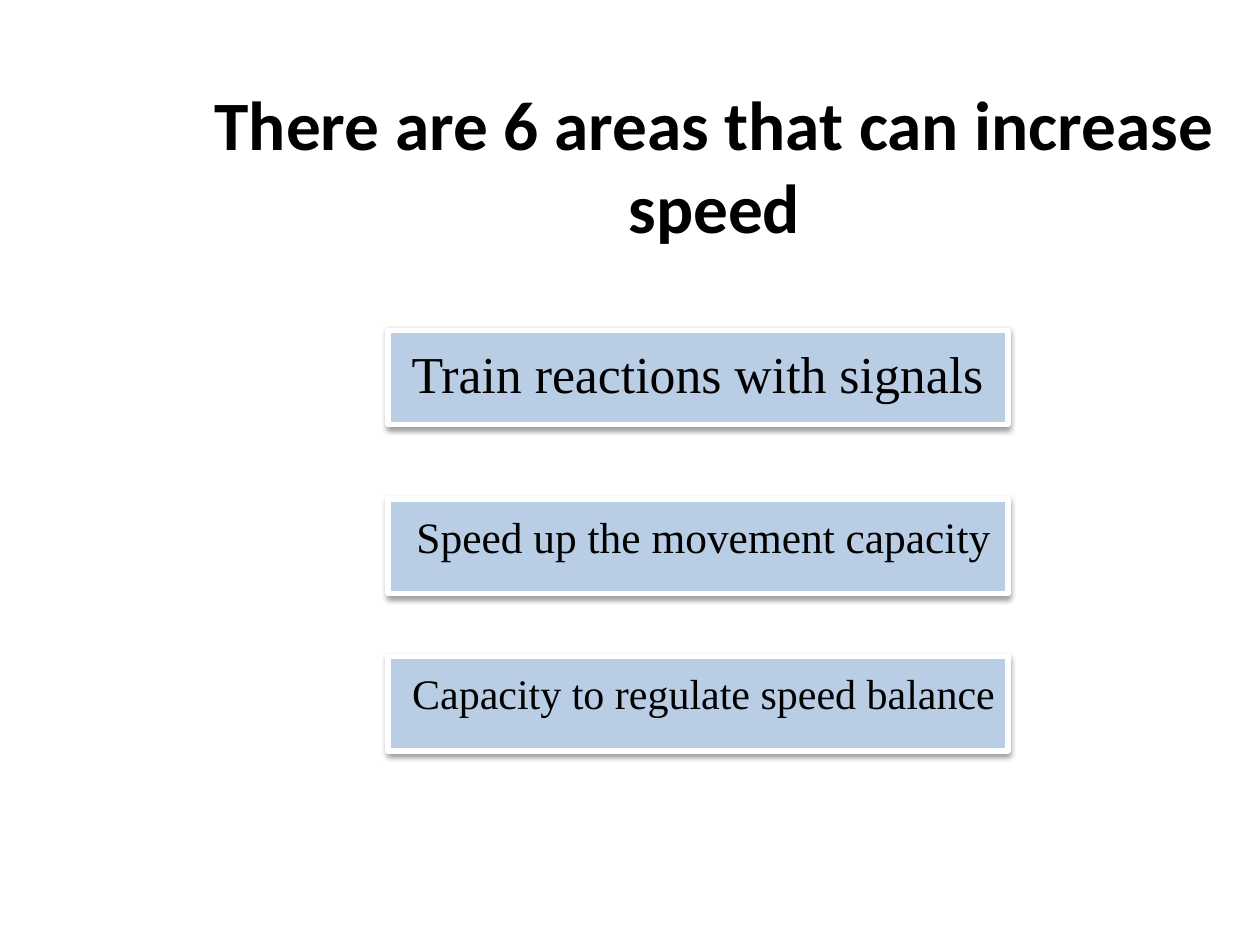
from dataclasses import dataclass

from lxml import etree
from pptx import Presentation
from pptx import util as u
from pptx.dml.color import RGBColor
from pptx.enum import shapes, text
from pptx.oxml import ns

WIDTH, HEIGHT = 10, 7.5
COLORS = {"ink": "000000", "panel": "B9CDE5", "border": "FFFFFF", "shadow": "000000"}
PANEL_LEFT, PANEL_WIDTH, PANEL_HEIGHT = 3.08, 4.92, 0.75


@dataclass
class Area:
    wording: str
    top: float
    size: float
    margin: float
    hanging: float


AREAS = [
    Area("Train reactions with signals", 2.62, 29.6, 0.38, 0.38),
    Area("Speed up the movement capacity", 3.96, 24.8, 0.4, 0.31),
    Area("Capacity to regulate speed balance", 5.21, 24, 0.4, 0.31),
]


def color(name: str) -> RGBColor:
    return RGBColor.from_string(COLORS[name])


def write(frame, wording: str, font: str, size: float, bold: bool = False):
    """Fill a frame with one centred paragraph and return the paragraph."""
    frame.word_wrap = True
    frame.text = wording
    line = frame.paragraphs[0]
    line.alignment = text.PP_ALIGN.CENTER
    style = line.runs[0].font
    style.name, style.size, style.bold = font, u.Pt(size), bold
    style.color.rgb = color("ink")
    return line


def add_soft_shadow(shape) -> None:
    shape.shadow.inherit = False
    effects = shape._element.spPr.find(ns.qn("a:effectLst"))
    shadow = etree.SubElement(
        effects, ns.qn("a:outerShdw"), blurRad=str(u.Pt(3.1)),
        dist=str(u.Pt(1.6)), dir="5400000", rotWithShape="0")
    tint = etree.SubElement(shadow, ns.qn("a:srgbClr"), val=COLORS["shadow"])
    etree.SubElement(tint, ns.qn("a:alpha"), val="38000")


def add_title(slide, wording: str) -> None:
    title = slide.shapes.add_textbox(
        u.Inches(1.57), u.Inches(0.68), u.Inches(8.2), u.Inches(1.25))
    title.text_frame.vertical_anchor = text.MSO_ANCHOR.MIDDLE
    write(title.text_frame, wording, "Calibri", 39.6, bold=True)


def add_area(slide, area: Area) -> None:
    panel = slide.shapes.add_shape(
        shapes.MSO_SHAPE.RECTANGLE, u.Inches(PANEL_LEFT), u.Inches(area.top),
        u.Inches(PANEL_WIDTH), u.Inches(PANEL_HEIGHT))
    panel.fill.solid()
    panel.fill.fore_color.rgb = color("panel")
    panel.line.color.rgb = color("border")
    panel.line.width = u.Pt(3)
    add_soft_shadow(panel)

    frame = panel.text_frame
    frame.vertical_anchor = text.MSO_ANCHOR.TOP
    frame.margin_top = u.Inches(0.09)
    line = write(frame, area.wording, "Times New Roman", area.size)
    indents = line._p.get_or_add_pPr()
    indents.set("marL", str(u.Inches(area.margin)))
    indents.set("indent", str(-u.Inches(area.hanging)))


def main() -> None:
    deck = Presentation()
    deck.slide_width, deck.slide_height = u.Inches(WIDTH), u.Inches(HEIGHT)
    slide = deck.slides.add_slide(deck.slide_layouts[6])

    # Heading
    add_title(slide, "There are 6 areas that can increase speed")

    # Panels, one for each area
    for area in AREAS:
        add_area(slide, area)

    deck.save("out.pptx")


if __name__ == "__main__":
    main()
